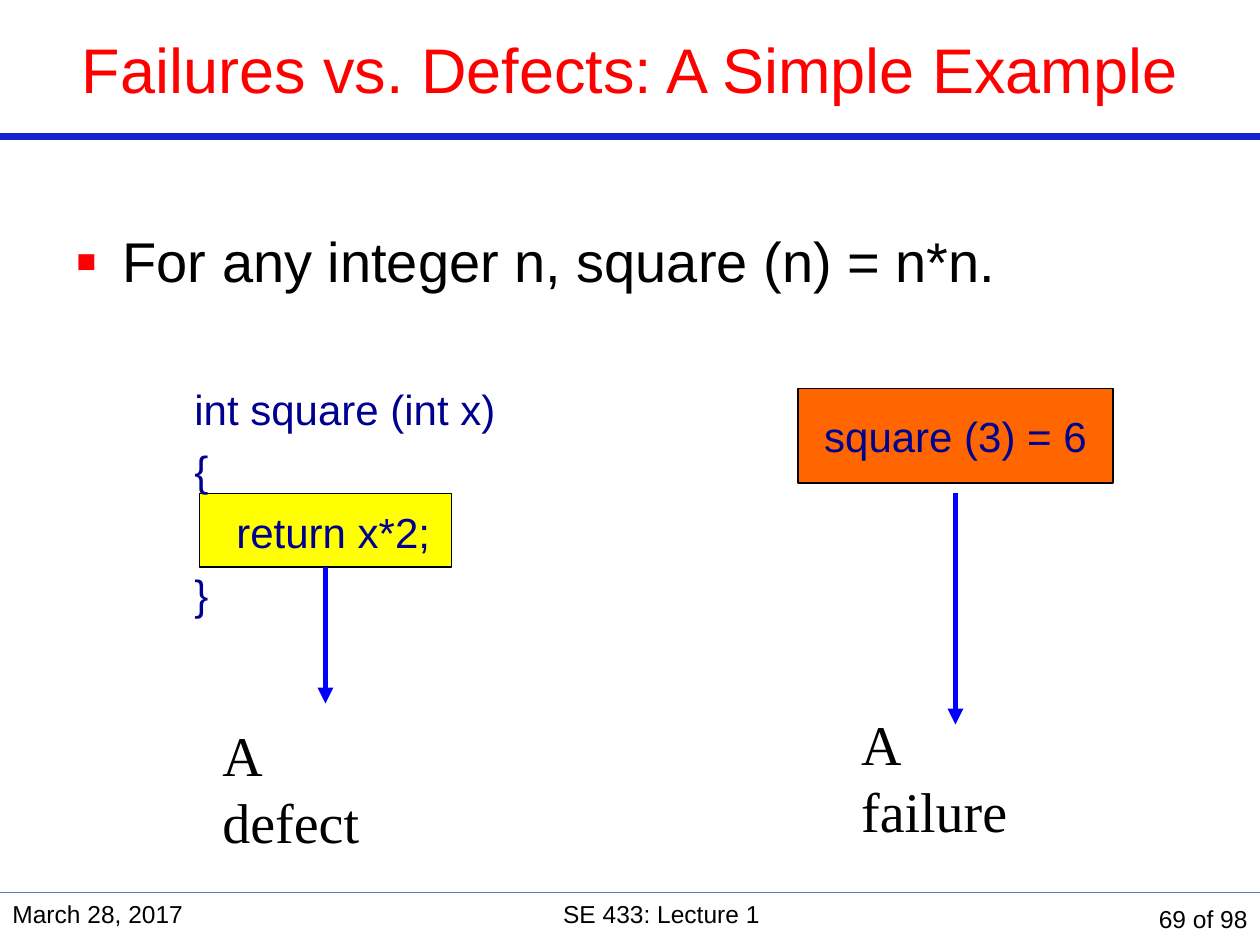
from pptx import Presentation
from pptx.dml.color import RGBColor
from pptx.enum.shapes import MSO_CONNECTOR, MSO_SHAPE
from pptx.enum.text import MSO_ANCHOR, PP_ALIGN
from pptx.oxml.ns import qn
from pptx.util import Pt
from lxml.etree import SubElement

BLACK, RED, NAVY, BLUE = "000000", "FF0000", "000090", "0000FF"
SANS, SERIF = "Arial", "Times New Roman"


def color(value):
    return RGBColor.from_string(value)


def add_run(p, text, size, fill=BLACK, font=SANS):
    r = p.add_run()
    r.text = text
    r.font.size = Pt(size)
    r.font.name = font
    r.font.color.rgb = color(fill)


def add_box(s, x, y, w, h, anchor=MSO_ANCHOR.TOP):
    tf = s.shapes.add_textbox(Pt(x), Pt(y), Pt(w), Pt(h)).text_frame
    tf.word_wrap = True
    tf.vertical_anchor = anchor
    return tf


def add_label(s, text, x, y, w, h, size, fill=BLACK, font=SANS,
              align=PP_ALIGN.LEFT, anchor=MSO_ANCHOR.TOP, before=0):
    p = add_box(s, x, y, w, h, anchor).paragraphs[0]
    p.alignment = align
    p.space_before = Pt(before)
    add_run(p, text, size, fill, font)


def add_rect(s, x, y, w, h, fill):
    sp = s.shapes.add_shape(MSO_SHAPE.RECTANGLE, Pt(x), Pt(y), Pt(w), Pt(h))
    sp.shadow.inherit = False
    sp.fill.solid()
    sp.fill.fore_color.rgb = color(fill)
    sp.line.color.rgb = color(BLACK)
    sp.line.width = Pt(0.75)
    return sp


def add_line(s, x1, y1, x2, y2, fill, width, arrow=False):
    line = s.shapes.add_connector(MSO_CONNECTOR.STRAIGHT, Pt(x1), Pt(y1), Pt(x2), Pt(y2))
    line.line.color.rgb = color(fill)
    line.line.width = Pt(width)
    if arrow:
        SubElement(line.line._get_or_add_ln(), qn("a:tailEnd"), type="triangle")
    SubElement(line._element.spPr, qn("a:effectLst"))


def set_indent(p, left, first=0):
    pPr = p._p.get_or_add_pPr()
    pPr.set("marL", str(Pt(left)))
    pPr.set("indent", str(Pt(first)))
    return pPr


def add_body(s):
    tf = add_box(s, 36, 126, 648, 347)
    p = tf.paragraphs[0]
    p.space_before = Pt(4)
    pPr = set_indent(p, 27, -27)
    SubElement(SubElement(pPr, qn("a:buClr")), qn("a:srgbClr"), val=RED)
    SubElement(pPr, qn("a:buSzPct"), val="114000")
    SubElement(pPr, qn("a:buFont"), typeface=SANS)
    SubElement(pPr, qn("a:buChar"), char="▪")
    add_run(p, "For any integer n, square (n) = n*n.", 32)

    code = [("int square (int x)", 68, 51), ("{", 68, 6.4),
            ("return x*2;", 92, 6.4), ("}", 68, 6.4)]
    for text, left, before in code:
        p = tf.add_paragraph()
        p.space_before = Pt(before)
        set_indent(p, left)
        add_run(p, text, 24, NAVY)


def add_result(s):
    sp = add_rect(s, 456, 222, 180, 54, "FF6600")
    tf = sp.text_frame
    tf.word_wrap = False
    tf.vertical_anchor = MSO_ANCHOR.MIDDLE
    p = tf.paragraphs[0]
    p.alignment = PP_ALIGN.CENTER
    add_run(p, "square (3) = 6", 24, NAVY)


def add_footer(s):
    top, h = 510, 30
    add_label(s, "March 28, 2017", 0, top, 156, h, 14)
    add_label(s, "SE 433: Lecture 1", 156, top, 444, h, 14, align=PP_ALIGN.CENTER)
    add_label(s, "69 of 98", 600, top, 120, h, 14, align=PP_ALIGN.RIGHT,
              anchor=MSO_ANCHOR.MIDDLE)


def main():
    prs = Presentation()
    prs.slide_width, prs.slide_height = Pt(720), Pt(540)
    s = prs.slides.add_slide(prs.slide_layouts[6])

    add_line(s, 0, 78, 720, 78, "1822CD", 4.5)
    add_line(s, 0, 510, 720, 510, "4F81BD", 0.75)
    add_rect(s, 114, 282, 144, 42, "FFFF00")
    add_label(s, "Failures vs. Defects: A Simple Example", 0, 0, 720, 78, 36, RED,
              align=PP_ALIGN.CENTER, anchor=MSO_ANCHOR.MIDDLE)
    add_body(s)
    add_result(s)
    add_label(s, "A failure", 485, 402, 123, 46, 32, font=SERIF, before=4)
    add_line(s, 546, 282, 546, 414, BLUE, 3, arrow=True)
    add_label(s, "A defect", 120, 408, 121, 46, 32, font=SERIF, before=4)
    add_line(s, 186, 324, 186, 402, BLUE, 3, arrow=True)
    add_footer(s)
    prs.save("out.pptx")


if __name__ == "__main__":
    main()
